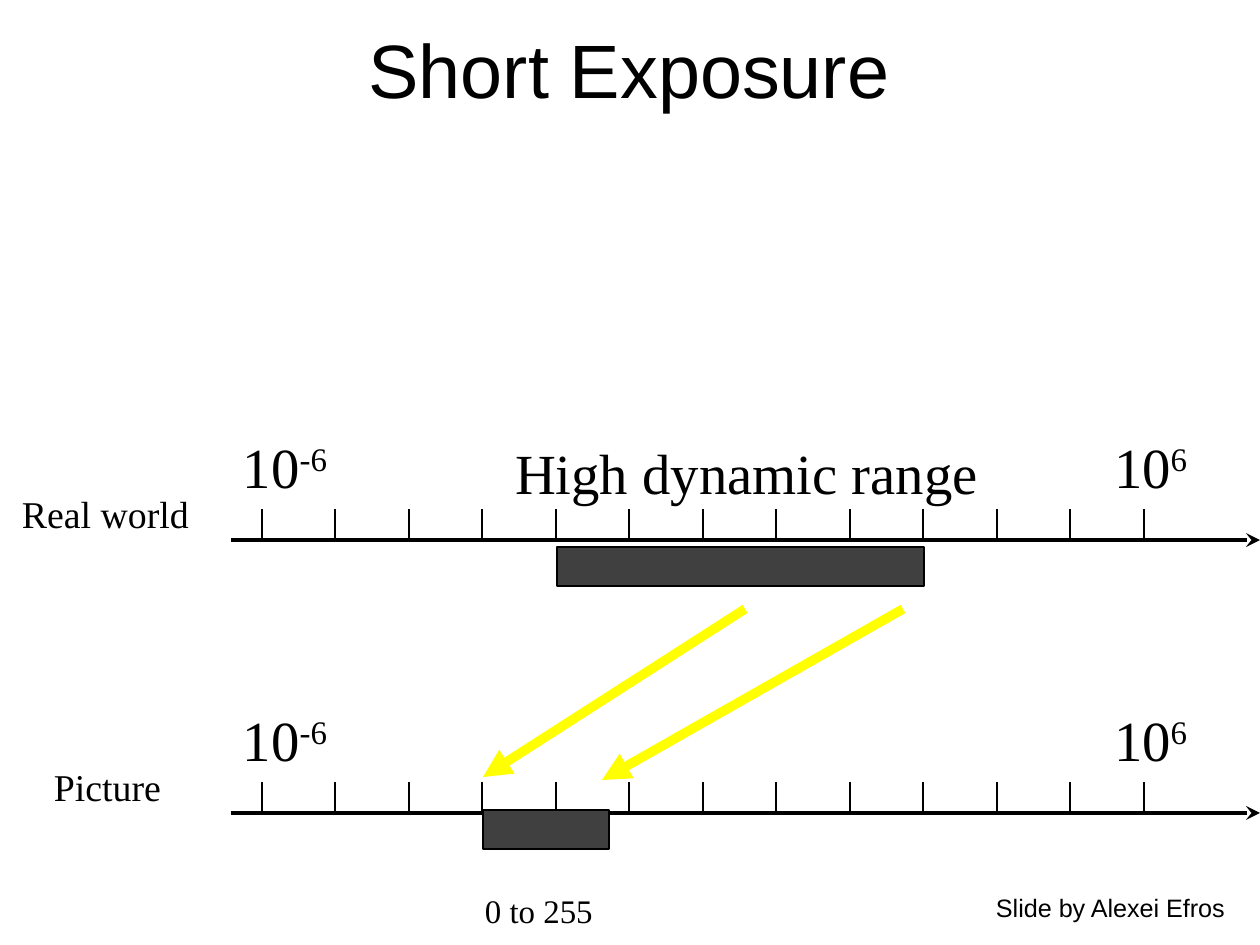
from dataclasses import dataclass

from lxml import etree
from pptx import Presentation
from pptx import util as u
from pptx.dml.color import RGBColor
from pptx.enum import shapes, text
from pptx.oxml import ns

PX = 8064  # EMU per px


@dataclass(frozen=True)
class Theme:
    ink: str = "000000"
    bar: str = "404040"
    arrow: str = "FFFF00"
    sans: str = "Arial"
    serif: str = "Times New Roman"
    title: int = 48
    scale: int = 36
    label: int = 24
    credit: int = 16


class SlideBuilder:
    def __init__(self, deck, theme):
        self.theme = theme
        self.slide = deck.slides.add_slide(deck.slide_layouts[5])

    def place(self, box, left, top, width, height):
        box.left, box.top, box.width, box.height = (
            side * PX for side in (left, top, width, height))

    def style_frame(self, frame, size, face):
        frame.margin_left = frame.margin_right = 12 * PX
        frame.margin_top = frame.margin_bottom = 7 * PX
        for span in frame.paragraphs[0].runs:
            span.font.size = u.Pt(size)
            span.font.name = face
            span.font.color.rgb = RGBColor.from_string(self.theme.ink)

    def title(self, words, *area):
        box = self.slide.shapes.title
        self.place(box, *area)
        frame = box.text_frame
        frame.text = words
        frame.vertical_anchor = text.MSO_ANCHOR.MIDDLE
        frame.paragraphs[0].alignment = text.PP_ALIGN.CENTER
        self.style_frame(frame, self.theme.title, self.theme.sans)

    def label(self, words, area, size, face=None, raised=""):
        """Add one line of text; the raised part is set as superscript."""
        box = self.slide.shapes.add_textbox(*(side * PX for side in area))
        frame = box.text_frame
        frame.word_wrap = False
        frame.auto_size = text.MSO_AUTO_SIZE.SHAPE_TO_FIT_TEXT
        para = frame.paragraphs[0]
        if words:
            para.add_run().text = words
        if raised:
            span = para.add_run()
            span.text = raised
            span.font._element.set("baseline", "30000")
        self.style_frame(frame, size, face or self.theme.serif)

    def line(self, start, end, color, weight, head=None):
        points = (side * PX for side in (*start, *end))
        line = self.slide.shapes.add_connector(shapes.MSO_CONNECTOR.STRAIGHT, *points)
        line.line.color.rgb = RGBColor.from_string(color)
        line.line.width = u.Pt(weight)
        if head:
            outline = line.line._get_or_add_ln()
            etree.SubElement(outline, ns.qn("a:tailEnd"), type=head)
        etree.SubElement(line._element.spPr, ns.qn("a:effectLst"))

    def bar(self, *area):
        bar = self.slide.shapes.add_shape(
            shapes.MSO_SHAPE.RECTANGLE, *(side * PX for side in area))
        bar.shadow.inherit = False
        bar.fill.solid()
        bar.fill.fore_color.rgb = RGBColor.from_string(self.theme.bar)
        bar.line.color.rgb = RGBColor.from_string(self.theme.ink)
        bar.line.width = u.Pt(1)

    def axis(self, base):
        """Draw a logarithmic scale whose arrow lies at height base."""
        theme = self.theme
        for step in range(13):
            x = 262 + step * 147 // 2
            self.line((x, base - 31), (x, base), theme.ink, 1)
        self.label("10", (231, base - 115, 115, 82), theme.scale, raised="-6")
        self.label("10", (1102, base - 115, 102, 82), theme.scale, raised="6")
        self.line((231, base), (1260, base), theme.ink, 3, "stealth")


def main():
    deck = Presentation()
    deck.slide_width, deck.slide_height = 1260 * PX, 945 * PX
    theme = Theme()
    page = SlideBuilder(deck, theme)

    page.title("Short Exposure", 94, 10, 1070, 116)
    for base in (540, 813):
        page.axis(base)
    page.label("Real world", (10, 484, 194, 59), theme.label)
    page.label("Picture", (42, 757, 134, 59), theme.label)
    page.label("", (473, 877, 151, 59), theme.scale, raised="0 to 255")

    for start, end in (((903, 609), (602, 780)), ((745, 609), (483, 777))):
        page.line(start, end, theme.arrow, 6, "triangle")
    page.bar(557, 547, 367, 39)
    page.bar(483, 810, 126, 39)

    page.label("High dynamic range", (503, 431, 493, 82), theme.scale)
    page.label("Slide by Alexei Efros", (984, 885, 256, 42), theme.credit, theme.sans)
    deck.save("out.pptx")


if __name__ == "__main__":
    main()
